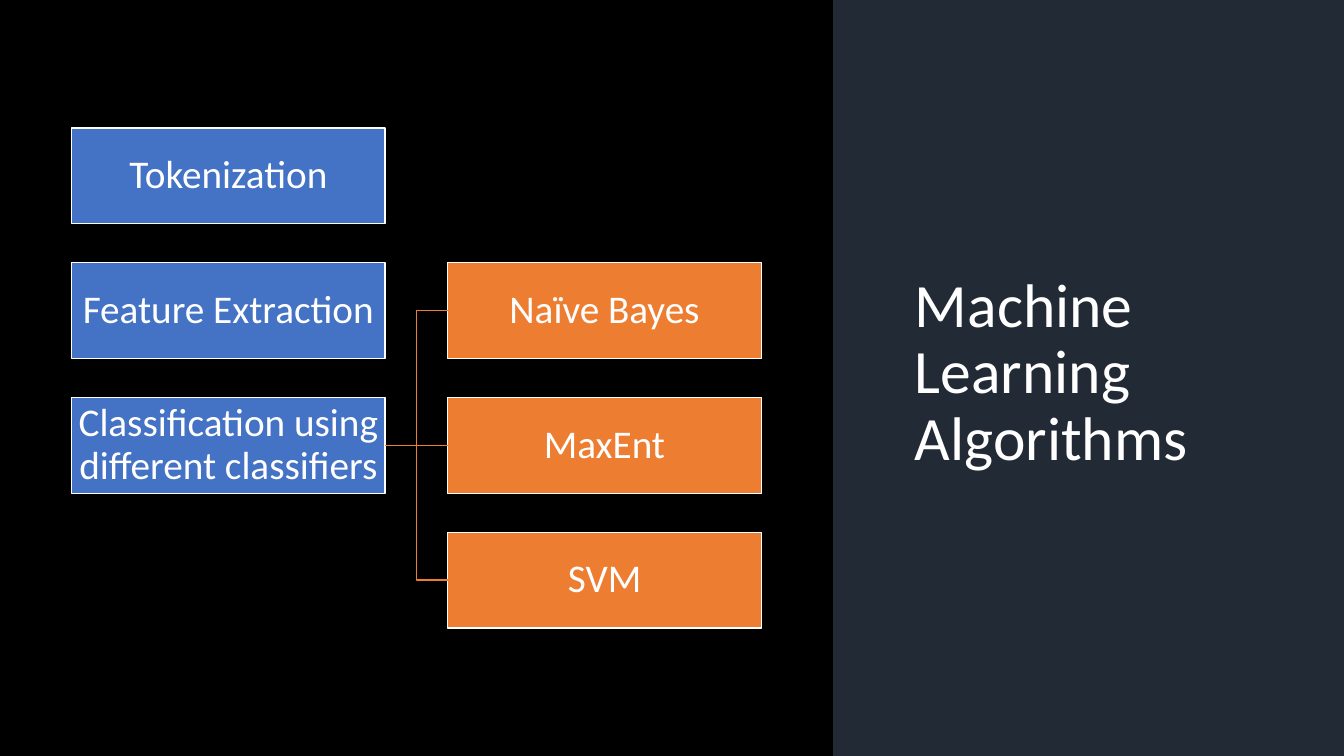
import dataclasses

import lxml.etree
import pptx
import pptx.dml.color
import pptx.enum.shapes
import pptx.enum.text
import pptx.oxml.ns
import pptx.util

Inches = pptx.util.Inches
SLIDE_WIDTH, SLIDE_HEIGHT = 13.33, 7.5


@dataclasses.dataclass(frozen=True)
class Theme:
    background: str = "000000"
    panel: str = "222A35"
    step: str = "4472C4"
    classifier: str = "ED7D31"
    light: str = "FFFFFF"
    font: str = "Calibri"
    title_size: int = 44
    node_size: int = 28
    line_width: int = 1
    line_spacing: float = 0.9


@dataclasses.dataclass(frozen=True)
class Area:
    left: float
    top: float
    width: float
    height: float

    def lengths(self):
        return [Inches(value) for value in dataclasses.astuple(self)]


THEME = Theme()
STEPS = ["Tokenization", "Feature Extraction", "Classification using different classifiers"]
CLASSIFIERS = ["Naïve Bayes", "MaxEnt", "SVM"]


def colour(code):
    return pptx.dml.color.RGBColor.from_string(code)


def write(frame, text, size, alignment):
    """Set one vertically centred paragraph in a text frame."""
    frame.word_wrap = True
    frame.auto_size = pptx.enum.text.MSO_AUTO_SIZE.NONE
    frame.vertical_anchor = pptx.enum.text.MSO_ANCHOR.MIDDLE
    para = frame.paragraphs[0]
    para.alignment = alignment
    para.line_spacing = THEME.line_spacing
    span = para.add_run()
    span.text = text
    span.font.name = THEME.font
    span.font.size = pptx.util.Pt(size)
    span.font.color.rgb = colour(THEME.light)


def add_rectangle(page, area, fill):
    box = page.shapes.add_shape(pptx.enum.shapes.MSO_SHAPE.RECTANGLE, *area.lengths())
    box.shadow.inherit = False
    box.fill.solid()
    box.fill.fore_color.rgb = colour(fill)
    box.line.fill.background()
    return box


def add_node(page, area, text, fill):
    box = add_rectangle(page, area, fill)
    box.line.color.rgb = colour(THEME.light)
    box.line.width = pptx.util.Pt(THEME.line_width)
    frame = box.text_frame
    frame.margin_left = frame.margin_right = Inches(0.02)
    frame.margin_top = frame.margin_bottom = Inches(0.02)
    write(frame, text, THEME.node_size, pptx.enum.text.PP_ALIGN.CENTER)
    return box


def add_branch(page, parent, child):
    """Join the right side of the parent to the left side of the child."""
    kinds = pptx.enum.shapes.MSO_CONNECTOR
    kind = kinds.STRAIGHT if parent.top == child.top else kinds.ELBOW
    branch = page.shapes.add_connector(kind, 0, 0, 0, 0)
    branch.begin_connect(parent, 3)
    branch.end_connect(child, 1)
    branch.line.color.rgb = colour(THEME.classifier)
    branch.line.width = pptx.util.Pt(THEME.line_width)
    lxml.etree.SubElement(branch.element.spPr, pptx.oxml.ns.qn("a:effectLst"))


def add_tree(page, area):
    """Two columns on a four-row grid; the second starts one row lower."""
    node_width, node_height = area.width / 2.2, area.height / 5.22
    column_pitch = area.width - node_width
    row_pitch = (area.height - node_height) / 3

    def add_column(column, first_row, labels, fill):
        return [
            add_node(
                page,
                Area(
                    area.left + column * column_pitch,
                    area.top + row * row_pitch,
                    node_width,
                    node_height,
                ),
                label,
                fill,
            )
            for row, label in enumerate(labels, first_row)
        ]

    steps = add_column(0, 0, STEPS, THEME.step)
    classifiers = add_column(1, 1, CLASSIFIERS, THEME.classifier)
    for classifier in classifiers:
        add_branch(page, steps[-1], classifier)


def add_title_panel(page, area, text):
    panel = add_rectangle(page, area, THEME.panel)
    title = page.shapes.title
    title.element.addprevious(panel.element)  # the panel lies behind the title
    title.left, title.top, title.width, title.height = Area(
        area.left + 0.14 * area.width,
        area.top + 0.093 * area.height,
        0.79 * area.width,
        0.803 * area.height,
    ).lengths()
    write(title.text_frame, text, THEME.title_size, pptx.enum.text.PP_ALIGN.LEFT)


def main():
    deck = pptx.Presentation()
    deck.slide_width, deck.slide_height = Inches(SLIDE_WIDTH), Inches(SLIDE_HEIGHT)
    page = deck.slides.add_slide(deck.slide_layouts.get_by_name("Title Only"))

    # Background
    page.background.fill.solid()
    page.background.fill.fore_color.rgb = colour(THEME.background)

    # Title panel on the right, process tree on the left
    panel_left = 0.62 * SLIDE_WIDTH
    panel_area = Area(panel_left, 0, SLIDE_WIDTH - panel_left, SLIDE_HEIGHT)
    add_title_panel(page, panel_area, "Machine Learning Algorithms")
    add_tree(page, Area(0.71, 1.27, 6.84, 4.96))

    deck.save("out.pptx")


if __name__ == "__main__":
    main()
